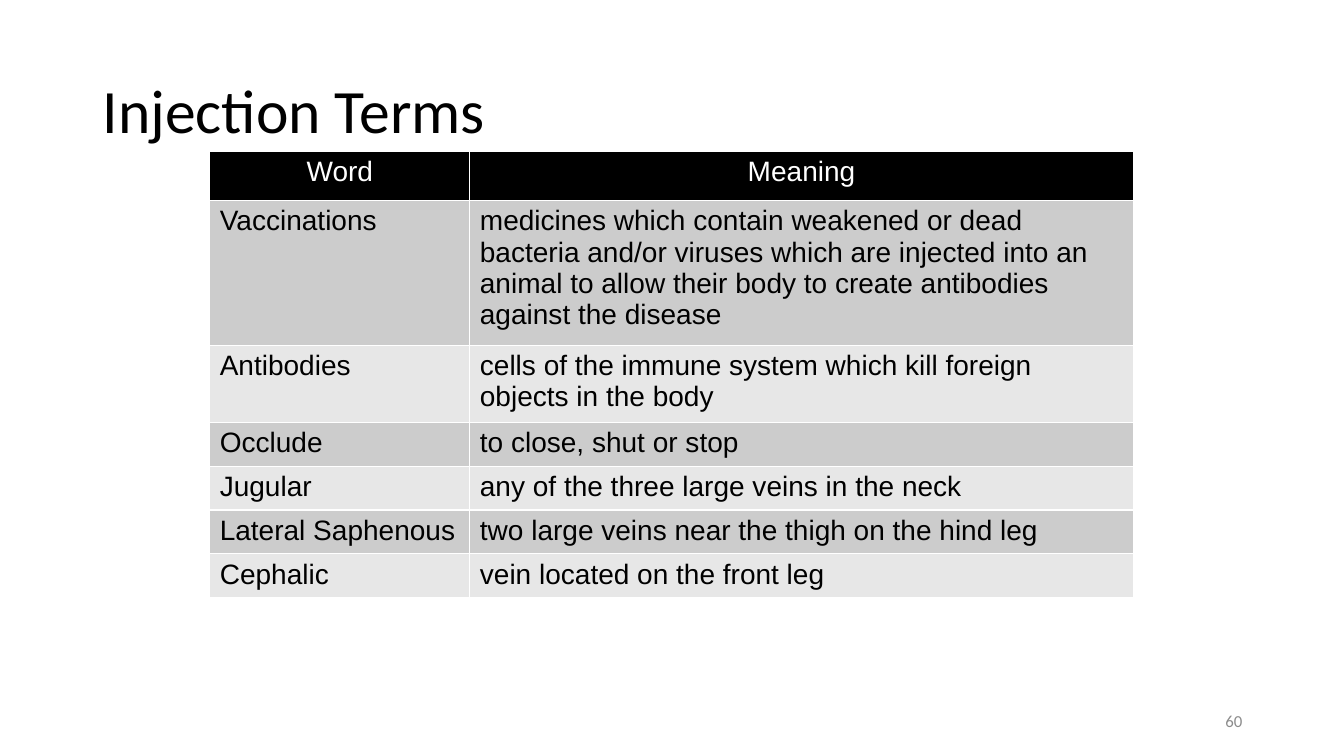
from pptx import Presentation
from pptx.dml.color import RGBColor
from pptx.enum.text import MSO_ANCHOR, PP_ALIGN
from pptx.util import Inches, Pt

# Content
TITLE = "Injection Terms"
NUMBER = "60"
HEAD = ("Word", "Meaning")
TERMS = [
    ("Vaccinations", "medicines which contain weakened or dead bacteria and/or "
     "viruses which are injected into an animal to allow their body to create "
     "antibodies against the disease"),
    ("Antibodies", "cells of the immune system which kill foreign objects in the body"),
    ("Occlude", "to close, shut or stop"),
    ("Jugular", "any of the three large veins in the neck"),
    ("Lateral Saphenous", "two large veins near the thigh on the hind leg"),
    ("Cephalic", "vein located on the front leg"),
]
WIDTHS = (2.58, 6.58)
HEIGHTS = (0.49, 1.34, 0.73, 0.41, 0.41, 0.41, 0.41)
BANDS = ("CCCCCC", "E7E7E7")


def paint(target, color):
    target.solid()
    target.fore_color.rgb = RGBColor.from_string(color)


def style(par, font, size, color, align=PP_ALIGN.LEFT):
    par.alignment = align
    par.font.name = font
    par.font.size = Pt(size)
    par.font.bold = False
    paint(par.font.fill, color)


def label(slide, text, box, size, color, align=PP_ALIGN.LEFT):
    frame = slide.shapes.add_textbox(*map(Inches, box)).text_frame
    frame.word_wrap = True
    frame.vertical_anchor = MSO_ANCHOR.MIDDLE
    frame.text = text
    style(frame.paragraphs[0], "Calibri", size, color, align)
    return frame.paragraphs[0]


def fill_table(slide):
    rows = [HEAD] + TERMS
    table = slide.shapes.add_table(
        len(rows), len(HEAD), Inches(2.08), Inches(1.5),
        Inches(sum(WIDTHS)), Inches(sum(HEIGHTS))).table
    for column, width in zip(table.columns, WIDTHS):
        column.width = Inches(width)
    for i, (row, texts) in enumerate(zip(table.rows, rows)):
        row.height = Inches(HEIGHTS[i])
        # Black header, then alternating grey bands
        if i == 0:
            back, ink, align = "000000", "FFFFFF", PP_ALIGN.CENTER
        else:
            back, ink, align = BANDS[(i - 1) % 2], "000000", PP_ALIGN.LEFT
        for cell, text in zip(row.cells, texts):
            cell.text = text
            paint(cell.fill, back)
            style(cell.text_frame.paragraphs[0], "Arial", 20, ink, align)


def main():
    deck = Presentation()
    deck.slide_width, deck.slide_height = Inches(13.33), Inches(7.5)
    slide = deck.slides.add_slide(deck.slide_layouts[6])

    # Title and slide number
    title = label(slide, TITLE, (0.92, 0.4, 11.5, 1.45), 44, "000000")
    title.line_spacing = 0.9
    label(slide, NUMBER, (9.42, 6.95, 3, 0.4), 12, "8C8C8C", PP_ALIGN.RIGHT)

    # Glossary
    fill_table(slide)
    deck.save("out.pptx")


if __name__ == "__main__":
    main()
